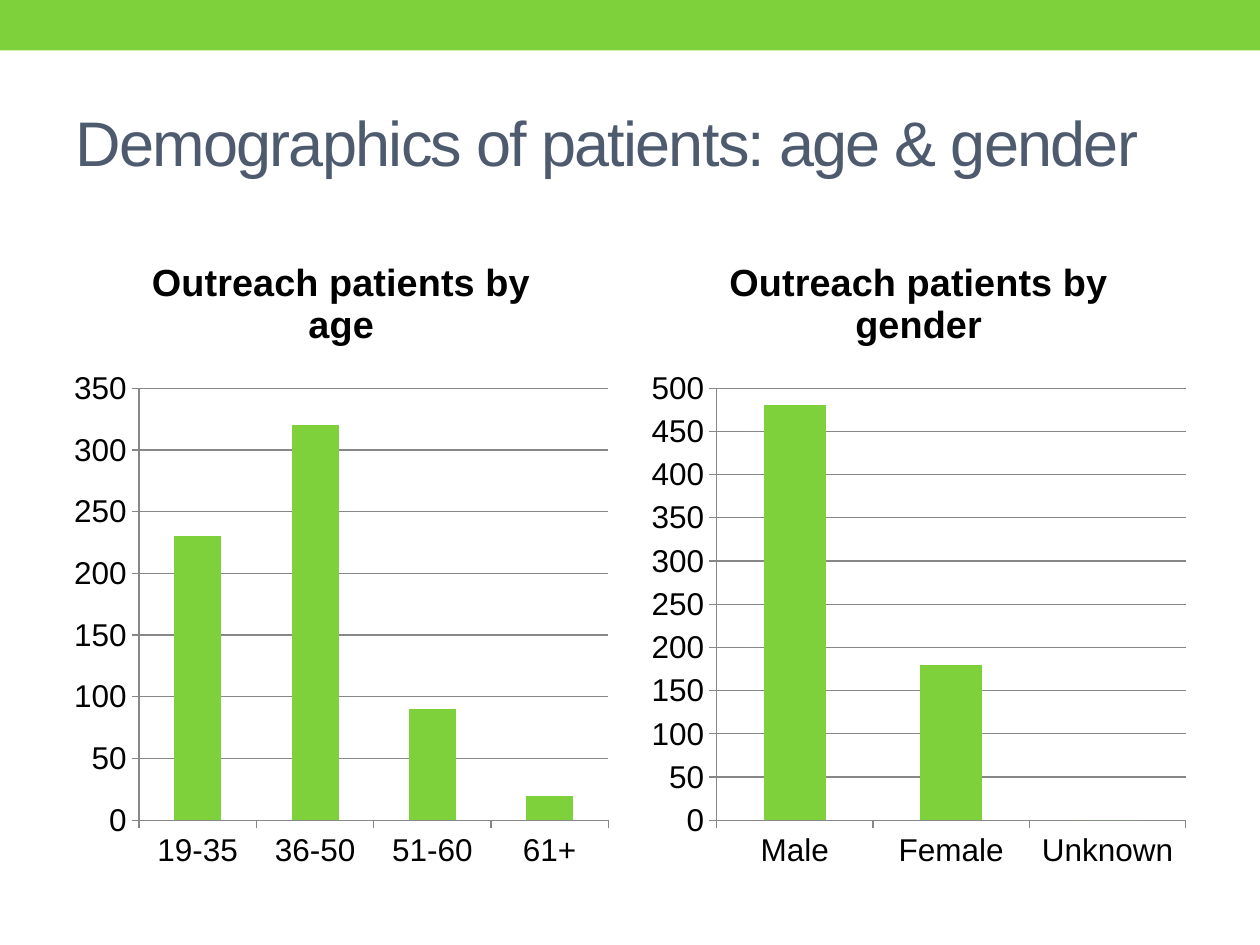
from pptx import Presentation
from pptx.chart.data import CategoryChartData
from pptx.dml.color import RGBColor
from pptx.enum.chart import XL_CHART_TYPE, XL_TICK_MARK
from pptx.enum.shapes import MSO_SHAPE
from pptx.enum.text import MSO_ANCHOR
from pptx.util import Pt

TITLE = "Demographics of patients: age & gender"
CHARTS = [
    {"title": "Outreach patients by age", "max": 350,
     "data": {"19-35": 230, "36-50": 320, "51-60": 90, "61+": 20}},
    {"title": "Outreach patients by gender", "max": 500,
     "data": {"Male": 480, "Female": 180, "Unknown": 0}},
]
GREEN, SLATE, BLACK, GRAY = "7FD13B", "4E5B6F", "000000", "878787"
FONT = "Arial"
SLIDE_W, SLIDE_H, MARGIN = 720, 540, 36
BAR_H = 28.8
CHART_TOP, CHART_W, CHART_H = 132, 318, 371.5


def rgb(color):
    return RGBColor.from_string(color)


def set_font(font, size, color, bold=False):
    font.name, font.size, font.bold = FONT, Pt(size), bold
    font.color.rgb = rgb(color)


def add_text(tf, text, size, color, bold=False, spacing=None):
    r = tf.paragraphs[0].add_run()
    r.text = text
    set_font(r.font, size, color, bold)
    if spacing is not None:
        r._r.get_or_add_rPr().set("spc", str(int(spacing * 100)))


def add_column_chart(s, item, left):
    data = CategoryChartData()
    data.categories = list(item["data"])
    data.add_series(item["title"], list(item["data"].values()))
    chart = s.shapes.add_chart(XL_CHART_TYPE.COLUMN_CLUSTERED, Pt(left), Pt(CHART_TOP),
                               Pt(CHART_W), Pt(CHART_H), data).chart
    set_font(chart.font, 18, BLACK)
    chart.has_legend = False
    chart.has_title = True
    add_text(chart.chart_title.text_frame, item["title"], 21.6, BLACK, bold=True)
    chart.chart_title.include_in_layout = False

    plot = chart.plots[0]
    plot.gap_width = 150
    plot.vary_by_categories = False
    fill = plot.series[0].format.fill
    fill.solid()
    fill.fore_color.rgb = rgb(GREEN)

    value_axis = chart.value_axis
    value_axis.minimum_scale, value_axis.maximum_scale = 0, item["max"]
    value_axis.major_unit = 50
    value_axis.has_major_gridlines = True
    for axis in (chart.category_axis, value_axis):
        axis.major_tick_mark = XL_TICK_MARK.OUTSIDE
        axis.minor_tick_mark = XL_TICK_MARK.NONE
    for part in (chart.category_axis, value_axis, value_axis.major_gridlines):
        part.format.line.color.rgb = rgb(GRAY)
        part.format.line.width = Pt(0.75)


prs = Presentation()
prs.slide_width, prs.slide_height = Pt(SLIDE_W), Pt(SLIDE_H)
s = prs.slides.add_slide(prs.slide_layouts[6])

bar = s.shapes.add_shape(MSO_SHAPE.RECTANGLE, 0, 0, Pt(SLIDE_W), Pt(BAR_H))
bar.shadow.inherit = False
bar.fill.solid()
bar.fill.fore_color.rgb = rgb(GREEN)
bar.line.fill.background()

sp = s.shapes.add_textbox(Pt(MARGIN), Pt(42), Pt(SLIDE_W - 2 * MARGIN), Pt(78))
tf = sp.text_frame
tf.word_wrap = True
tf.vertical_anchor = MSO_ANCHOR.MIDDLE
add_text(tf, TITLE, 36, SLATE, spacing=-1)

step = SLIDE_W - 2 * MARGIN - CHART_W
for i, item in enumerate(CHARTS):
    add_column_chart(s, item, MARGIN + i * step)

prs.save("out.pptx")
